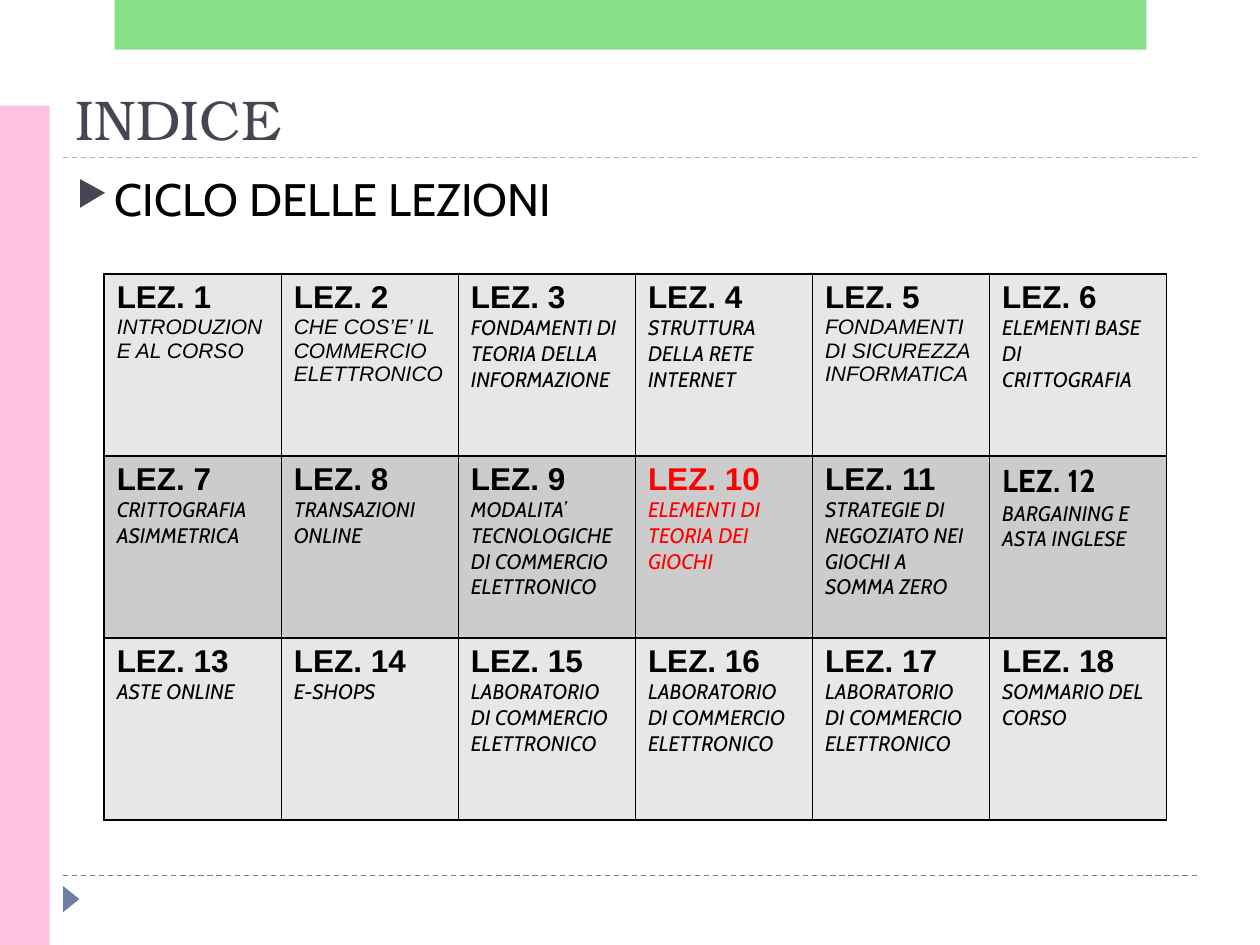
from lxml.etree import SubElement
from pptx import Presentation
from pptx.dml.color import RGBColor
from pptx.enum.dml import MSO_LINE
from pptx.enum.shapes import MSO_CONNECTOR, MSO_SHAPE
from pptx.enum.text import MSO_ANCHOR, PP_ALIGN
from pptx.oxml.ns import qn
from pptx.util import Cm, Pt

BLACK = RGBColor(0x00, 0x00, 0x00)
RED = RGBColor(0xFF, 0x00, 0x00)
SLATE = RGBColor(0x46, 0x46, 0x53)
BLUE = RGBColor(0x72, 0x7C, 0xA3)
LIGHT_BLUE = RGBColor(0x9F, 0xB8, 0xCD)
PINK = RGBColor(0xFF, 0xC1, 0xE0)
GREEN = RGBColor(0x62, 0xD8, 0x62)
ROW_FILLS = (RGBColor(0xE7, 0xE7, 0xE7), RGBColor(0xCC, 0xCC, 0xCC))

TITLE = "INDICE"
SUBTITLE = "CICLO DELLE LEZIONI"
LESSONS = [
    "INTRODUZIONE AL CORSO",
    "CHE COS’E’ IL COMMERCIO ELETTRONICO",
    "FONDAMENTI DI TEORIA DELLA\nINFORMAZIONE",
    "STRUTTURA DELLA RETE INTERNET",
    "FONDAMENTI DI SICUREZZA INFORMATICA",
    "ELEMENTI BASE DI CRITTOGRAFIA",
    "CRITTOGRAFIA ASIMMETRICA",
    "TRANSAZIONI ONLINE",
    "MODALITA’ TECNOLOGICHE DI COMMERCIO ELETTRONICO",
    "ELEMENTI DI TEORIA DEI GIOCHI",
    "STRATEGIE DI NEGOZIATO NEI GIOCHI A SOMMA ZERO",
    "BARGAINING E ASTA INGLESE",
    "ASTE ONLINE",
    "E-SHOPS",
    "LABORATORIO DI COMMERCIO ELETTRONICO",
    "LABORATORIO DI COMMERCIO ELETTRONICO",
    "LABORATORIO DI COMMERCIO ELETTRONICO",
    "SOMMARIO DEL CORSO",
]
CURRENT_LESSON = 10
ARIAL_TOPICS = {1, 2, 5}
CABIN_HEADINGS = {12}

ROWS, COLS = 3, 6
COL_W, ROW_H = 3.57, 3.67
MARGIN, CONTENT_W = 1.27, 22.86


def add_run(p, text, font, size, color, bold=False, italic=False):
    r = p.add_run()
    r.text = text
    r.font.name, r.font.size = font, Pt(size)
    r.font.bold, r.font.italic = bold, italic
    r.font.color.rgb = color


def add_block(s, kind, left, top, width, height, color):
    sp = s.shapes.add_shape(kind, Cm(left), Cm(top), Cm(width), Cm(height))
    sp.shadow.inherit = False
    sp.fill.solid()
    sp.fill.fore_color.rgb = color
    sp.line.fill.background()
    return sp


def add_rule(s, y, color):
    line = s.shapes.add_connector(MSO_CONNECTOR.STRAIGHT, Cm(MARGIN), Cm(y),
                                  Cm(MARGIN + CONTENT_W), Cm(y))
    line.line.color.rgb = color
    line.line.width = Pt(0.75)
    line.line.dash_style = MSO_LINE.DASH
    SubElement(line._element.spPr, qn("a:effectLst"))


def add_bullet(p):
    pPr = p._p.get_or_add_pPr()
    pPr.set("marL", str(Cm(0.76)))
    pPr.set("indent", str(-Cm(0.76)))
    color = SubElement(pPr, qn("a:buClr"))
    SubElement(color, qn("a:srgbClr"), val=str(SLATE))
    SubElement(pPr, qn("a:buSzPct"), val="76000")
    SubElement(pPr, qn("a:buChar"), char="▶")


def set_borders(cell):
    tcPr = cell._tc.get_or_add_tcPr()
    for i, side in enumerate(("a:lnL", "a:lnR", "a:lnT", "a:lnB")):
        ln = tcPr.makeelement(qn(side), {"w": str(Pt(1))})
        fill = SubElement(ln, qn("a:solidFill"))
        SubElement(fill, qn("a:srgbClr"), val=str(BLACK))
        tcPr.insert(i, ln)


def fill_lesson(cell, number, topic):
    color = RED if number == CURRENT_LESSON else BLACK
    heading_font = "Cabin" if number in CABIN_HEADINGS else "Arial"
    topic_font = "Arial" if number in ARIAL_TOPICS else "Cabin"
    tf = cell.text_frame
    add_run(tf.paragraphs[0], f"LEZ. {number}", heading_font, 18, color, bold=True)
    p = tf.add_paragraph()
    for i, part in enumerate(topic.split("\n")):
        if i:
            p.add_line_break()
        add_run(p, part, topic_font, 12, color, italic=True)


def add_lessons(s):
    table = s.shapes.add_table(ROWS, COLS, Cm(2.1), Cm(5.52),
                               Cm(COLS * COL_W), Cm(ROWS * ROW_H)).table
    for col in table.columns:
        col.width = Cm(COL_W)
    for row in table.rows:
        row.height = Cm(ROW_H)
    for i, topic in enumerate(LESSONS):
        row, col = divmod(i, COLS)
        cell = table.cell(row, col)
        cell.fill.solid()
        cell.fill.fore_color.rgb = ROW_FILLS[row % 2]
        set_borders(cell)
        fill_lesson(cell, i + 1, topic)


def main():
    prs = Presentation()
    prs.slide_width, prs.slide_height = Cm(25.4), Cm(19.05)
    s = prs.slides.add_slide(prs.slide_layouts[5])

    add_rule(s, 17.65, BLUE)
    add_rule(s, 3.17, LIGHT_BLUE)
    marker = add_block(s, MSO_SHAPE.ISOSCELES_TRIANGLE, 1.17, 17.96, 0.53, 0.33, BLUE)
    marker.rotation = 90
    add_block(s, MSO_SHAPE.RECTANGLE, 0, 2.13, 1, 16.92, PINK)
    banner = add_block(s, MSO_SHAPE.RECTANGLE, 2.31, 0, 20.8, 1, GREEN)
    green = banner._element.spPr.find(qn("a:solidFill")).find(qn("a:srgbClr"))
    SubElement(green, qn("a:alpha"), val="76000")

    title = s.shapes.title
    title.left, title.top = Cm(MARGIN), Cm(1.4)
    title.width, title.height = Cm(CONTENT_W), Cm(1.78)
    tf = title.text_frame
    tf.vertical_anchor = MSO_ANCHOR.BOTTOM
    p = tf.paragraphs[0]
    p.alignment = PP_ALIGN.LEFT
    add_run(p, TITLE, "TeX Gyre Bonum", 32, SLATE)

    box = s.shapes.add_textbox(Cm(1.3), Cm(3.33), Cm(CONTENT_W), Cm(2))
    tf = box.text_frame
    tf.word_wrap = True
    add_bullet(tf.paragraphs[0])
    add_run(tf.paragraphs[0], SUBTITLE, "Cabin", 26, BLACK)

    add_lessons(s)
    prs.save("out.pptx")


if __name__ == "__main__":
    main()
